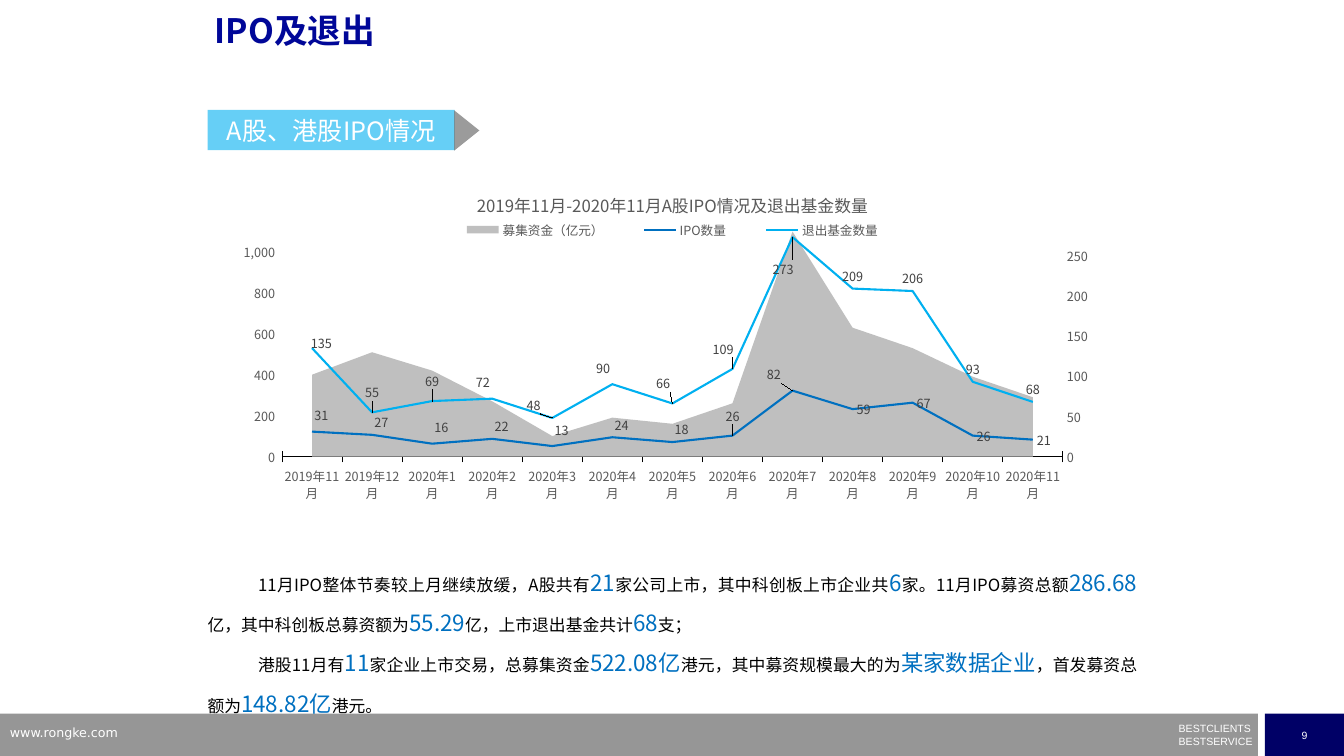
import copy

import pptx
import pptx.util
import pptx.chart.axis
import pptx.chart.data
import pptx.dml.color
import pptx.enum.chart
import pptx.enum.shapes
import pptx.enum.text
import pptx.oxml
import pptx.oxml.ns

Pt = pptx.util.Pt
RGBColor = pptx.dml.color.RGBColor
qn = pptx.oxml.ns.qn
Align = pptx.enum.text.PP_ALIGN
Anchor = pptx.enum.text.MSO_ANCHOR
Shape = pptx.enum.shapes.MSO_SHAPE
Tick = pptx.enum.chart.XL_TICK_MARK
LabelPosition = pptx.enum.chart.XL_LABEL_POSITION

WIDTH = pptx.util.Inches(13.33)
HEIGHT = pptx.util.Inches(7.5)
MAIN_FONT = "Noto Sans CJK SC"
WHITE = RGBColor(0xFF, 0xFF, 0xFF)
BLACK = RGBColor(0, 0, 0)
NAVY = RGBColor(0, 0, 0x66)
TITLE_BLUE = RGBColor(0, 0x07, 0x98)
BLUE = RGBColor(0, 0x70, 0xC0)
SKY = RGBColor(0, 0xB0, 0xF0)
BAR_GREY = RGBColor(0x96, 0x96, 0x96)
AREA_GREY = RGBColor(0xBF, 0xBF, 0xBF)
AXIS_GREY = RGBColor(0x59, 0x59, 0x59)
LABEL_GREY = RGBColor(0x40, 0x40, 0x40)

MONTHS = ["2019年11月", "2019年12月"] + [f"2020年{month}月" for month in range(1, 12)]
FUNDS = [400, 510, 420, 270, 100, 190, 160, 260, 1100, 630, 530, 390, 290]
LISTINGS = [31, 27, 16, 22, 13, 24, 18, 26, 82, 59, 67, 26, 21]
EXITS = [135, 55, 69, 72, 48, 90, 66, 109, 273, 209, 206, 93, 68]
LISTING_SHIFTS = [(1, -1), (1, 0), (1, -1), (1, 0), (1, -1), (1, 0), (1, 0), (0, -2), (-2, -1)]
EXIT_SHIFTS = [(1, 2), (0, -2), (0, -2), (-1, -1), (-2, 0), (-1, -1), (-1, -2), (-1, -2), (-1, 12)]

SUMMARY = [
    ["11月IPO整体节奏较上月继续放缓，A股共有", "21", "家公司上市，其中科创板上市企业共", "6",
     "家。11月IPO募资总额", "286.68", "亿，其中科创板总募资额为", "55.29",
     "亿，上市退出基金共计", "68", "支；"],
    ["港股11月有", "11", "家企业上市交易，总募集资金", "522.08亿", "港元，其中募资规模最大的为",
     "某家数据企业", "，首发募资总额为", "148.82亿", "港元。"],
]


def place(left, top, width, height):
    return [int(WIDTH * left / 100), int(HEIGHT * top / 100),
            int(WIDTH * width / 100), int(HEIGHT * height / 100)]


def style(font, size, color, name=MAIN_FONT, bold=False):
    font.size, font.bold = Pt(size), bold
    font.color.rgb = color
    font.name = name


def style_span(span, size, color, name=MAIN_FONT, bold=False):
    style(span.font, size, color, name, bold)
    east_asian = span._r.get_or_add_rPr().makeelement(qn("a:ea"), {"typeface": name})
    span.font._element.find(qn("a:latin")).addnext(east_asian)


def fill_text(box, text, size, color, name=MAIN_FONT, align=Align.LEFT, bold=False):
    box.text_frame.text = text
    for para in box.text_frame.paragraphs:
        para.alignment = align
        for span in para.runs:
            style_span(span, size, color, name, bold)


def add_block(page, kind, area, color, opacity=100):
    block = page.shapes.add_shape(kind, *place(*area))
    block.shadow.inherit = False
    block.fill.solid()
    block.fill.fore_color.rgb = color
    block.line.fill.background()
    block.text_frame.vertical_anchor = Anchor.MIDDLE
    if opacity < 100:
        tint = block._element.spPr.find(qn("a:solidFill"))[0]
        tint.append(tint.makeelement(qn("a:alpha"), {"val": str(opacity * 1000)}))
    return block


def add_text_box(page, area, inset=True):
    box = page.shapes.add_textbox(*place(*area))
    frame = box.text_frame
    frame.word_wrap = True
    if not inset:
        frame.margin_left = frame.margin_right = frame.margin_top = frame.margin_bottom = 0
    return box


def add_footer(page):
    add_block(page, Shape.RECTANGLE, (0, 94.4, 93.6, 5.6), BAR_GREY)
    number = add_block(page, Shape.RECTANGLE, (94.12, 94.4, 5.88, 5.6), NAVY)
    fill_text(number, "9", 7.5, WHITE, "Arial", Align.CENTER)
    slogan = add_text_box(page, (87.7, 96.27, 5.7, 2.67), inset=False)
    fill_text(slogan, "BESTCLIENTS\nBESTSERVICE", 7.5, WHITE, "Arial")
    for para in slogan.text_frame.paragraphs:
        para.line_spacing = 0.5
    slogan.text_frame.paragraphs[1].space_before = Pt(4.3)
    address = add_text_box(page, (0, 95.2, 24, 3.47))
    fill_text(address, "www.rongke.com", 9, WHITE, "DejaVu Sans")


def add_heading(page):
    title = page.shapes.title
    title.left, title.top, title.width, title.height = place(15.23, 1.2, 67.5, 9.33)
    fill_text(title, "IPO及退出", 24, TITLE_BLUE, bold=True)
    title.text_frame.vertical_anchor = Anchor.TOP
    title.text_frame.auto_size = pptx.enum.text.MSO_AUTO_SIZE.NONE
    title.text_frame.paragraphs[0].line_spacing = 0.9
    tag = add_block(page, Shape.RECTANGLE, (15.45, 14.53, 18.38, 5.33), SKY, 60)
    fill_text(tag, "A股、港股IPO情况", 18, WHITE, align=Align.CENTER)
    pointer = add_block(page, Shape.ISOSCELES_TRIANGLE, (33.23, 15.6, 3, 3.33), AXIS_GREY, 60)
    pointer.rotation = 90


def add_summary(page):
    frame = add_text_box(page, (15.45, 73.47, 69.17, 20.93), inset=False).text_frame
    for index, pieces in enumerate(SUMMARY):
        para = frame.add_paragraph() if index else frame.paragraphs[0]
        para.alignment, para.line_spacing = Align.JUSTIFY, 1.5
        para._p.get_or_add_pPr().set("indent", str(pptx.util.Inches(0.5)))
        for position, piece in enumerate(pieces):
            span = para.add_run()
            span.text = piece
            style_span(span, *((16, BLUE) if position % 2 else (12, BLACK)))


def set_layout(element, index, **shares):
    parts = "".join(f'<c:{key} val="{value}"/>' for key, value in shares.items())
    element.insert(index, pptx.oxml.parse_xml(
        f'<c:layout {pptx.oxml.ns.nsdecls("c")}><c:manualLayout>{parts}</c:manualLayout></c:layout>'))


def style_line(series, color, shifts):
    series.smooth = False
    series.marker.style = pptx.enum.chart.XL_MARKER_STYLE.NONE
    series.format.line.color.rgb = color
    series.format.line.width = Pt(1.5)
    labels = series.data_labels
    labels.show_value = True
    labels.position = LabelPosition.RIGHT if color == BLUE else LabelPosition.ABOVE
    style(labels.font, 9, LABEL_GREY)
    for index, (across, down) in enumerate(shifts):
        label = series.points[index].data_label
        style(label.font, 9, LABEL_GREY)
        label.position = LabelPosition.ABOVE
        set_layout(label._dLbl, 1, x=across / 100, y=down / 100)


def style_axes(chart):
    months, amounts = chart.category_axis, chart.value_axis
    for axis in (months, amounts):
        style(axis.tick_labels.font, 9, AXIS_GREY)
        axis.has_major_gridlines = False
        axis.minor_tick_mark = Tick.NONE
    months.major_tick_mark = Tick.CROSS
    months.format.line.color.rgb = BLACK
    months.format.line.width = Pt(0.5)
    amounts.major_tick_mark = Tick.NONE
    amounts.format.line.fill.background()
    amounts.minimum_scale, amounts.maximum_scale, amounts.major_unit = 0, 1100, 200
    amounts.tick_labels.number_format = "#,##0_);[Red]\\(#,##0\\)"
    amounts.tick_labels.number_format_is_linked = False
    element = amounts._element
    for between in element.findall(qn("c:crossBetween")):
        element.remove(between)
    element.find(qn("c:crosses")).addnext(
        element.makeelement(qn("c:crossBetween"), {"val": "between"}))


def split_plots(chart):
    lines = chart.plots[0]._element
    months, amounts = chart.category_axis._element, chart.value_axis._element
    area = pptx.oxml.parse_xml(
        f'<c:areaChart {pptx.oxml.ns.nsdecls("c")}><c:grouping val="standard"/>'
        '<c:varyColors val="0"/></c:areaChart>')
    funds = lines.find(qn("c:ser"))
    for name in ("c:marker", "c:smooth"):
        for child in funds.findall(qn(name)):
            funds.remove(child)
    area.append(funds)
    lines.addprevious(area)
    right_months, right_amounts = copy.deepcopy(months), copy.deepcopy(amounts)
    for axis_id, new_id in zip(lines.findall(qn("c:axId")), ("5001", "5002")):
        area.append(copy.deepcopy(axis_id))
        axis_id.set("val", new_id)
    for axis, own, other in ((right_months, "5001", "5002"), (right_amounts, "5002", "5001")):
        axis.find(qn("c:axId")).set("val", own)
        axis.find(qn("c:crossAx")).set("val", other)
    amounts.addnext(right_amounts)
    right_amounts.addnext(right_months)
    pptx.chart.axis.CategoryAxis(right_months).visible = False
    counts = pptx.chart.axis.ValueAxis(right_amounts)
    counts.maximum_scale, counts.major_unit = 280, 50
    counts.tick_labels.number_format = "General"
    right_amounts.find(qn("c:axPos")).set("val", "r")
    right_amounts.find(qn("c:crosses")).set("val", "max")


def add_ipo_chart(page):
    data = pptx.chart.data.CategoryChartData()
    data.categories = MONTHS
    for name, values in (("募集资金（亿元）", FUNDS), ("IPO数量", LISTINGS), ("退出基金数量", EXITS)):
        data.add_series(name, values)
    chart = page.shapes.add_chart(pptx.enum.chart.XL_CHART_TYPE.LINE,
                                  *place(15.45, 23.07, 69.17, 48.8), data).chart
    style(chart.font, 10, BLACK)
    chart.has_title = True
    chart.chart_title.text_frame.text = "2019年11月-2020年11月A股IPO情况及退出基金数量"
    style_span(chart.chart_title.text_frame.paragraphs[0].runs[0], 12, AXIS_GREY)
    chart.has_legend = True
    chart.legend.position = pptx.enum.chart.XL_LEGEND_POSITION.TOP
    chart.legend.include_in_layout = False
    style(chart.legend.font, 9, AXIS_GREY)
    for old in chart.legend._element.findall(qn("c:layout")):
        chart.legend._element.remove(old)
    set_layout(chart.legend._element, 1, xMode="edge", yMode="edge", x=0.24, y=0.12, w=0.52, h=0.06)
    plot = chart.plots[0]
    plot.vary_by_categories = False
    funds, listings, exits = plot.series
    funds.format.fill.solid()
    funds.format.fill.fore_color.rgb = AREA_GREY
    style_line(listings, BLUE, LISTING_SHIFTS)
    style_line(exits, SKY, EXIT_SHIFTS)
    style_axes(chart)
    split_plots(chart)
    plot_area = chart._chartSpace.chart.plotArea
    for old in plot_area.findall(qn("c:layout")):
        plot_area.remove(old)
    set_layout(plot_area, 0, layoutTarget="inner", xMode="edge", yMode="edge",
               x=0.08, y=0.155, w=0.84, h=0.61)


def main():
    deck = pptx.Presentation()
    deck.slide_width, deck.slide_height = WIDTH, HEIGHT
    page = deck.slides.add_slide(deck.slide_layouts[5])
    add_footer(page)
    add_heading(page)
    add_summary(page)
    add_ipo_chart(page)
    deck.save("out.pptx")


if __name__ == "__main__":
    main()
